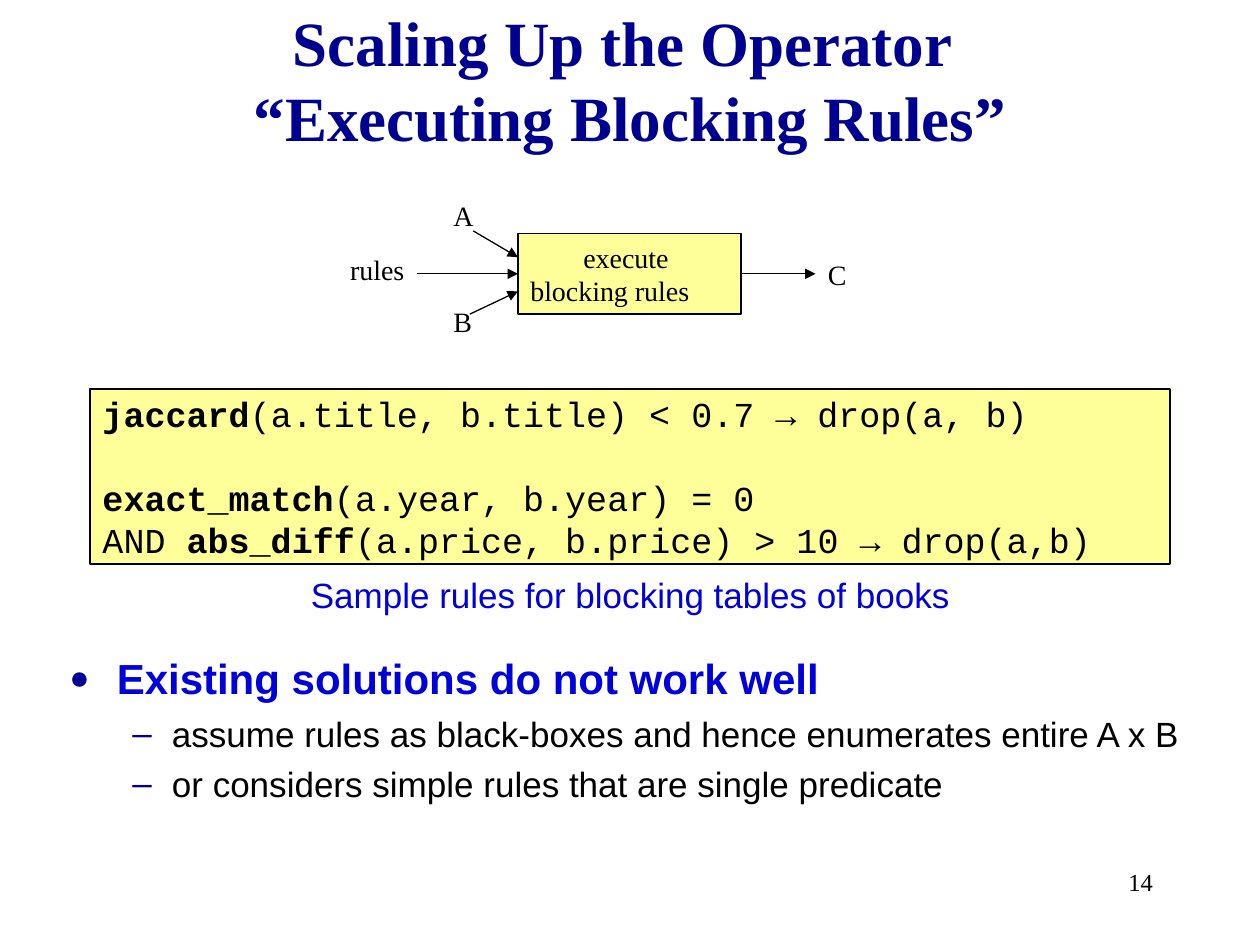
from dataclasses import dataclass

from lxml.etree import SubElement
from pptx import Presentation
from pptx.dml.color import RGBColor
from pptx.enum.shapes import MSO_CONNECTOR, MSO_SHAPE
from pptx.enum.text import MSO_ANCHOR as Anchor, MSO_AUTO_SIZE, PP_ALIGN as Align
from pptx.oxml.ns import qn
from pptx.util import Pt

COLORS = {
    "title": "000090",
    "accent": "0000DC",
    "bullet": "000099",
    "ink": "000000",
    "box": "FFFF99",
}
SERIF, SANS, MONO = "Times New Roman", "Arial", "Courier New"


@dataclass(frozen=True)
class Area:
    left: float
    top: float
    width: float
    height: float


@dataclass(frozen=True)
class Label:
    text: str
    area: Area


@dataclass(frozen=True)
class Arrow:
    x1: float
    y1: float
    x2: float
    y2: float


@dataclass(frozen=True)
class Bullet:
    text: str
    level: int
    mark: str
    mark_percent: int
    indent: float
    hang: float
    size: float
    color: str
    bold: bool


def write(paragraph, text, *, size, font=SERIF, color="ink", bold=False,
          align=Align.LEFT, before=0):
    paragraph.alignment = align
    paragraph.space_before = Pt(before)
    for position, line in enumerate(text.split("\n")):
        if position:
            paragraph.add_line_break()
        run = paragraph.add_run()
        run.text = line
        run.font.size = Pt(size)
        run.font.name = font
        run.font.bold = bold
        run.font.color.rgb = RGBColor.from_string(COLORS[color])


def place(shape, area: Area, anchor=Anchor.TOP):
    shape.left, shape.top = Pt(area.left), Pt(area.top)
    shape.width, shape.height = Pt(area.width), Pt(area.height)
    frame = shape.text_frame
    frame.word_wrap = True
    frame.auto_size = MSO_AUTO_SIZE.NONE
    frame.vertical_anchor = anchor
    return frame


def add_label(slide, label: Label, **style):
    frame = place(slide.shapes.add_textbox(0, 0, 0, 0), label.area)
    write(frame.paragraphs[0], label.text, **style)


def add_box(slide, area: Area, line_width: float):
    box = slide.shapes.add_shape(MSO_SHAPE.RECTANGLE, 0, 0, 0, 0)
    box.shadow.inherit = False
    box.fill.solid()
    box.fill.fore_color.rgb = RGBColor.from_string(COLORS["box"])
    box.line.color.rgb = RGBColor.from_string(COLORS["ink"])
    box.line.width = Pt(line_width)
    return place(box, area, Anchor.MIDDLE)


def add_arrow(slide, arrow: Arrow):
    connector = slide.shapes.add_connector(
        MSO_CONNECTOR.STRAIGHT,
        Pt(arrow.x1), Pt(arrow.y1), Pt(arrow.x2), Pt(arrow.y2))
    connector.line.color.rgb = RGBColor.from_string(COLORS["ink"])
    connector.line.width = Pt(0.75)
    SubElement(connector.line._get_or_add_ln(), qn("a:tailEnd"), type="triangle")
    SubElement(connector._element.spPr, qn("a:effectLst"))


def add_bullet(paragraph, bullet: Bullet, before: float):
    paragraph.level = bullet.level
    write(paragraph, bullet.text, size=bullet.size, font=SANS,
          color=bullet.color, bold=bullet.bold, before=before)
    props = paragraph._p.get_or_add_pPr()
    props.set("marL", str(Pt(bullet.indent)))
    props.set("indent", str(Pt(-bullet.hang)))
    mark_color = SubElement(props, qn("a:buClr"))
    SubElement(mark_color, qn("a:srgbClr"), val=COLORS["bullet"])
    SubElement(props, qn("a:buSzPct"), val=str(bullet.mark_percent * 1000))
    SubElement(props, qn("a:buFont"), typeface=SANS)
    SubElement(props, qn("a:buChar"), char=bullet.mark)


LABELS = [
    Label("A", Area(252, 110, 24, 27)),
    Label("B", Area(252, 170.5, 24, 27)),
    Label("rules", Area(193, 141, 56, 27)),
    Label("C", Area(466, 143.5, 56, 27)),
]
ARROWS = [
    Arrow(238.5, 156.5, 296, 156.5),
    Arrow(423.5, 156.5, 466, 156.5),
    Arrow(268.5, 179.5, 296, 166.5),
    Arrow(270.5, 132, 296, 147),
]
RULES = [
    [("jaccard", True), ("(a.title, b.title) < 0.7 → drop(a, b)", False)],
    [("exact_match", True), ("(a.year, b.year) = 0\nAND ", False),
     ("abs_diff", True), ("(a.price, b.price) > 10 → drop(a,b)", False)],
]


def sub_bullet(text: str) -> Bullet:
    return Bullet(text, 1, "–", 100, 58.5, 22.5, 20, "ink", False)


BULLETS = [
    Bullet("Existing solutions do not work well", 0, "●", 80, 27, 27, 24,
           "accent", True),
    sub_bullet("assume rules as black-boxes and hence enumerates entire A x B"),
    sub_bullet("or considers simple rules that are single predicate"),
]


def main():
    deck = Presentation()
    deck.slide_width, deck.slide_height = Pt(720), Pt(540)
    slide = deck.slides.add_slide(deck.slide_layouts[1])

    title = place(slide.shapes.title, Area(54, 18, 612, 54), Anchor.MIDDLE)
    write(title.paragraphs[0],
          "Scaling Up the Operator \n“Executing Blocking Rules”",
          size=36, color="title", bold=True, align=Align.CENTER)

    body = place(slide.placeholders[1], Area(32.5, 369.5, 684, 162))
    for position, bullet in enumerate(BULLETS):
        paragraph = body.add_paragraph() if position else body.paragraphs[0]
        add_bullet(paragraph, bullet, before=5 if position else 0)

    operator = add_box(slide, Area(296, 133.5, 127.5, 46), 0.75)
    write(operator.paragraphs[0], "execute ", size=16, align=Align.CENTER)
    write(operator.add_paragraph(), "blocking rules", size=16)
    for arrow in ARROWS:
        add_arrow(slide, arrow)
    for label in LABELS:
        add_label(slide, label, size=16)

    code = add_box(slide, Area(51.5, 222.5, 617, 100), 1)
    for position, rule in enumerate(RULES):
        paragraph = code.add_paragraph() if position else code.paragraphs[0]
        for text, bold in rule:
            write(paragraph, text, size=20, font=MONO, bold=bold,
                  before=24 if position else 0)

    add_label(slide, Label("Sample rules for blocking tables of books",
                           Area(170.5, 324, 400, 36)),
              size=20, font=SANS, color="accent")
    add_label(slide, Label("14", Area(516, 492, 150, 36)),
              size=14, align=Align.RIGHT)

    deck.save("out.pptx")


if __name__ == "__main__":
    main()
